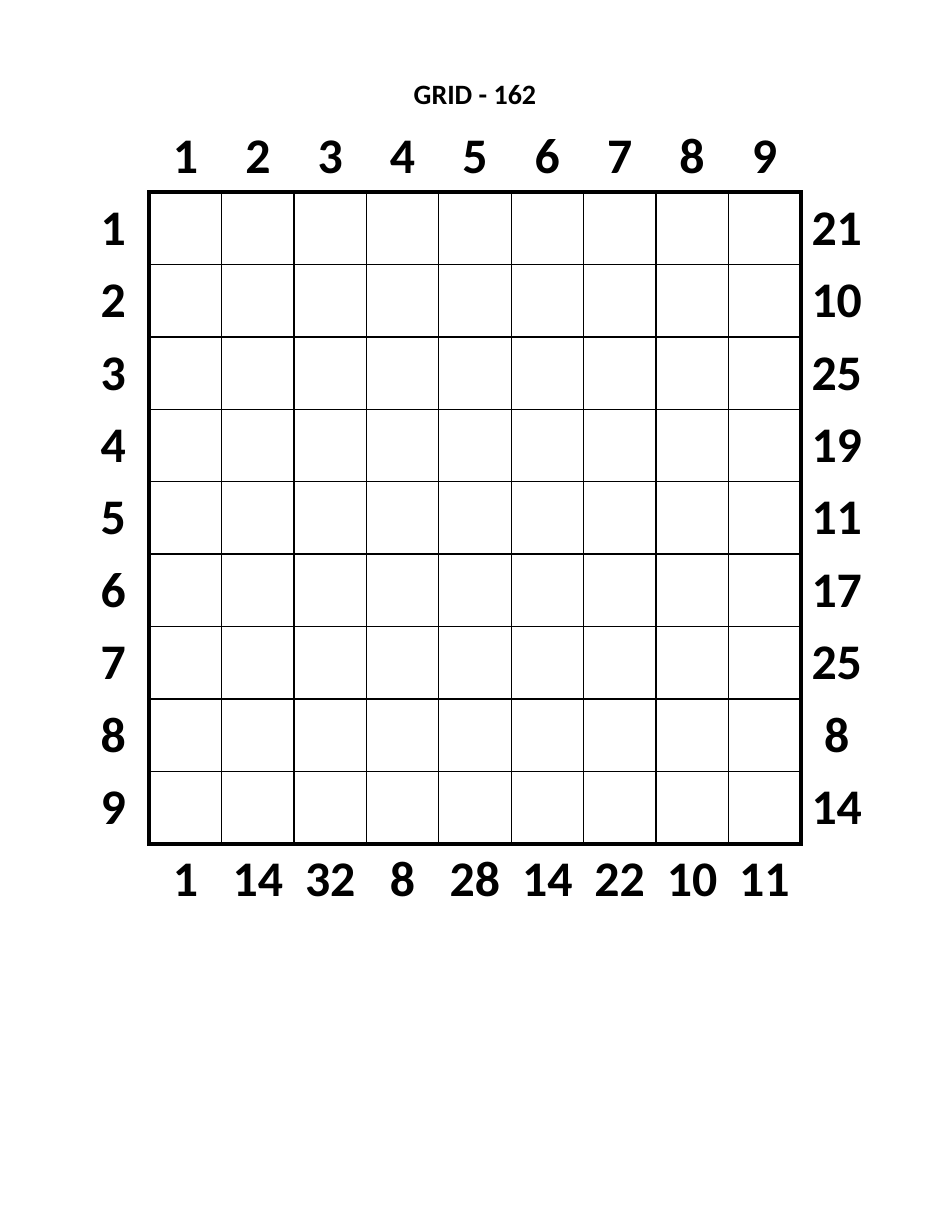
from typing import NamedTuple

from lxml.etree import SubElement
from pptx import Presentation
from pptx.dml.color import RGBColor
from pptx.enum.text import MSO_ANCHOR, MSO_AUTO_SIZE, PP_ALIGN
from pptx.oxml.ns import qn
from pptx.util import Pt

EMU_PER_PX = 914400 // 112
COLORS = {"ink": "000000", "paper": "FFFFFF"}
FONT = "Calibri"

ROW_TOTALS = [21, 10, 25, 19, 11, 17, 25, 8, 14]
COLUMN_TOTALS = [1, 14, 32, 8, 28, 14, 22, 10, 11]
SIZE = len(ROW_TOTALS)
SPAN = SIZE + 2
LEFT, TITLE_TOP, GRID_TOP = 77, 77, 120
GRID_SIDE, TITLE_HEIGHT = 796, 34
THIN, THICK = 1, 3


class Side(NamedTuple):
    tag: str
    row_step: int
    column_step: int


SIDES = [
    Side("a:lnL", 0, -1),
    Side("a:lnR", 0, 1),
    Side("a:lnT", -1, 0),
    Side("a:lnB", 1, 0),
]


def px(length: int) -> int:
    return length * EMU_PER_PX


def write_text(frame, text: str, *, size: int, bold: bool = True, color: str = "ink") -> None:
    paragraph = frame.paragraphs[0]
    paragraph.alignment = PP_ALIGN.CENTER
    run = paragraph.add_run()
    run.text = text
    run.font.name = FONT
    run.font.size = Pt(size)
    run.font.bold = bold
    run.font.color.rgb = RGBColor.from_string(COLORS[color])


def in_play(row: int, column: int) -> bool:
    """Tell whether a cell is one of the empty squares to fill in."""
    return 1 <= row <= SIZE and 1 <= column <= SIZE


def border_width(row: int, column: int, side: Side) -> int:
    """Thin between squares, thick around them, none among the labels."""
    here = in_play(row, column)
    beyond = in_play(row + side.row_step, column + side.column_step)
    if here and beyond:
        return THIN
    return THICK if here or beyond else 0


def draw_borders(cell, row: int, column: int) -> None:
    properties = cell._tc.get_or_add_tcPr()
    for side in SIDES:
        width = border_width(row, column, side)
        line = SubElement(properties, qn(side.tag), w=str(Pt(width)))
        if width:
            fill = SubElement(line, qn("a:solidFill"))
            SubElement(fill, qn("a:srgbClr"), val=COLORS["ink"])
        else:
            SubElement(line, qn("a:noFill"))


def label_for(row: int, column: int) -> str:
    if 1 <= column <= SIZE:
        labels = {0: column, SIZE + 1: COLUMN_TOTALS[column - 1]}
        return str(labels.get(row, ""))
    if 1 <= row <= SIZE:
        return str(row if column == 0 else ROW_TOTALS[row - 1])
    return ""


def clear_margins(box) -> None:
    box.margin_left = box.margin_right = box.margin_top = box.margin_bottom = 0


def draw_title(slide, text: str) -> None:
    title = slide.shapes.title
    title.left, title.top = px(LEFT), px(TITLE_TOP)
    title.width, title.height = px(GRID_SIDE), px(TITLE_HEIGHT)
    frame = title.text_frame
    clear_margins(frame)
    frame.word_wrap = True
    frame.auto_size = MSO_AUTO_SIZE.NONE
    frame.vertical_anchor = MSO_ANCHOR.TOP
    write_text(frame, text, size=18)


def draw_grid(slide) -> None:
    side = px(GRID_SIDE)
    grid = slide.shapes.add_table(SPAN, SPAN, px(LEFT), px(GRID_TOP), side, side).table
    grid.first_row = grid.horz_banding = False
    for line in (*grid.columns, ):
        line.width = side // SPAN
    for line in grid.rows:
        line.height = side // SPAN
    for index, cell in enumerate(grid.iter_cells()):
        row, column = divmod(index, SPAN)
        clear_margins(cell)
        cell.vertical_anchor = MSO_ANCHOR.MIDDLE
        draw_borders(cell, row, column)
        cell.fill.solid()
        cell.fill.fore_color.rgb = RGBColor.from_string(COLORS["paper"])
        label = label_for(row, column)
        if label:
            write_text(cell.text_frame, label, size=32)


def main() -> None:
    presentation = Presentation()
    presentation.slide_width, presentation.slide_height = px(952), px(1232)
    slide = presentation.slides.add_slide(presentation.slide_layouts[5])
    draw_title(slide, "GRID - 162")
    draw_grid(slide)
    presentation.save("out.pptx")


if __name__ == "__main__":
    main()
